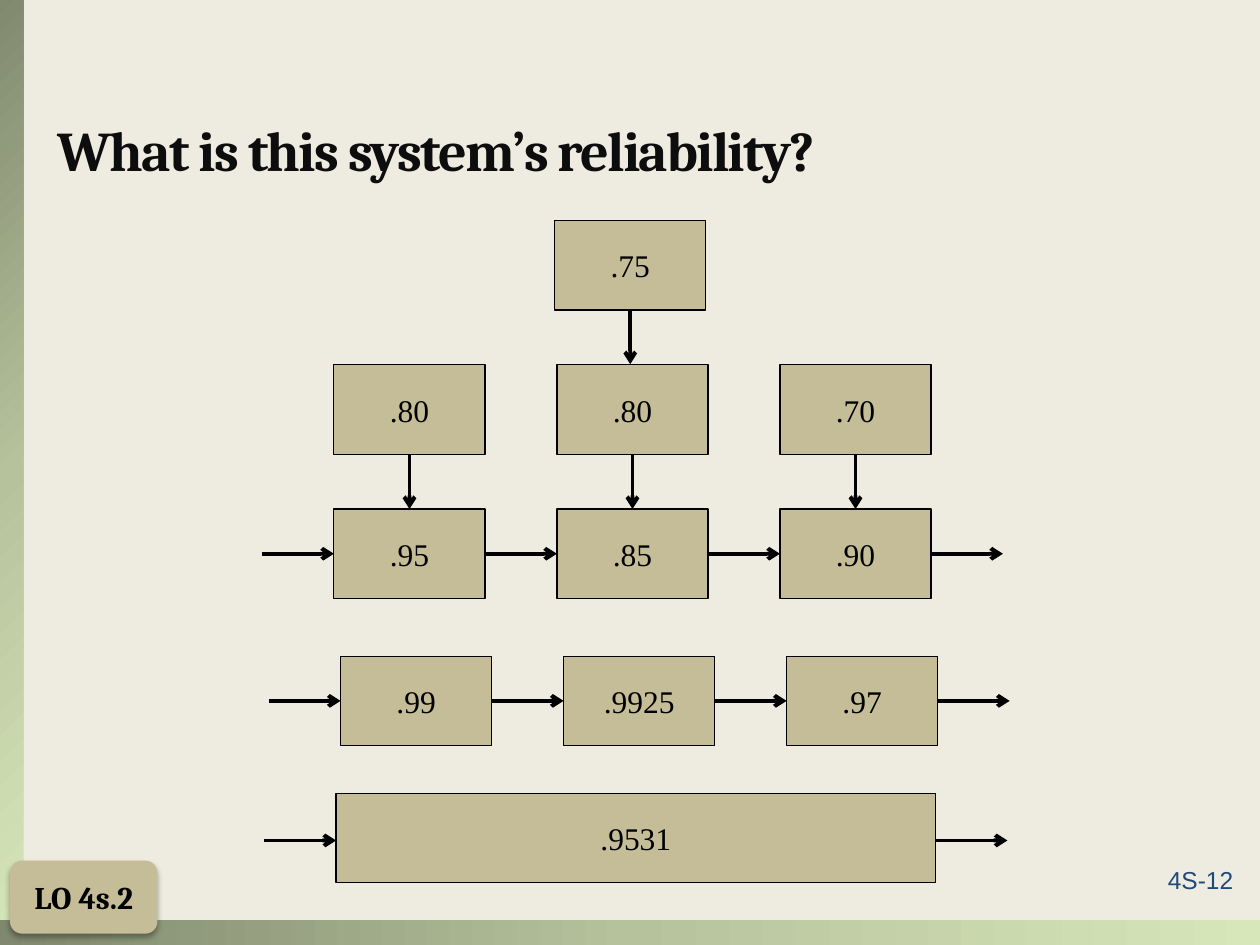
from lxml import etree
from pptx import Presentation
from pptx import util as u
from pptx.dml.color import RGBColor
from pptx.enum import shapes, text
from pptx.oxml import parse_xml
from pptx.oxml.ns import nsdecls, qn

W, H = 10, 7.5
LEFT, TOP = 2.65, 1.75
COL, ROW = 1.77, 1.145
BOX_W, BOX_H = 1.2, 0.71
GAP = COL - BOX_W
TOP_SIDE, LEFT_SIDE, BOTTOM_SIDE, RIGHT_SIDE = range(4)


def rgb(value):
    return RGBColor.from_string(value)


class Deck:
    INK, TAN, PAPER = "000000", "C4BD97", "EEECE1"
    GRADIENT = ((0, "80896E"), (50, "B6C29C"), (100, "D8E7BA"))

    def __init__(self):
        self.prs = Presentation()
        self.prs.slide_width, self.prs.slide_height = u.Inches(W), u.Inches(H)
        self.s = self.prs.slides.add_slide(self.prs.slide_layouts[5])
        self.s.background.fill.solid()
        self.s.background.fill.fore_color.rgb = rgb(self.PAPER)
        self.tree = self.s.shapes

    def group(self):
        self.tree = self.s.shapes.add_group_shape().shapes

    def ungroup(self):
        self.tree = self.s.shapes

    def label(self, sp, words, size, font, color, bold=False,
              align=text.PP_ALIGN.CENTER, anchor=text.MSO_ANCHOR.MIDDLE):
        tf = sp.text_frame
        tf.text = words
        tf.word_wrap = True
        tf.vertical_anchor = anchor
        p = tf.paragraphs[0]
        p.alignment = align
        r = p.runs[0]
        r.font.size, r.font.name, r.font.bold = u.Pt(size), font, bold
        r.font.color.rgb = rgb(color)
        return r

    def shape(self, kind, x, y, w, h, fill=None):
        sp = self.tree.add_shape(kind, *map(u.Inches, (x, y, w, h)))
        sp.shadow.inherit = False
        sp.line.fill.background()
        if fill:
            sp.fill.solid()
            sp.fill.fore_color.rgb = rgb(fill)
        return sp

    def title(self, words):
        sp = self.s.shapes.title
        sp.left, sp.top, sp.width, sp.height = map(u.Inches, (0.36, 0.17, 9, 1.33))
        r = self.label(sp, words, 32, "Cambria", "0D0D0D", True,
                       text.PP_ALIGN.LEFT, text.MSO_ANCHOR.BOTTOM)
        sp.text_frame.auto_size = text.MSO_AUTO_SIZE.NONE
        rPr = r._r.get_or_add_rPr()
        rPr.set("spc", "-100")
        rPr.insert(0, parse_xml(
            f'<a:ln {nsdecls("a")} w="3175"><a:solidFill><a:srgbClr val="D2D0C7">'
            '<a:alpha val="25000"/></a:srgbClr></a:solidFill></a:ln>'))

    def band(self, x, y, w, h, direction, rotation=0):
        sp = self.shape(shapes.MSO_SHAPE.RECTANGLE, x, y, w, h)
        sp.rotation = rotation
        sp.fill.background()
        spPr = sp._element.spPr
        stops = "".join(f'<a:gs pos="{pos * 1000}"><a:srgbClr val="{color}"/></a:gs>'
                        for pos, color in self.GRADIENT)
        spPr.replace(spPr.find(qn("a:noFill")), parse_xml(
            f'<a:gradFill {nsdecls("a")} rotWithShape="0"><a:gsLst>{stops}</a:gsLst>'
            f'{direction}</a:gradFill>'))

    def number(self, words):
        sp = self.tree.add_textbox(*map(u.Inches, (9.17, 6.82, 0.75, 0.34)))
        self.label(sp, words, 14, "Arial", "1F497D",
                   align=text.PP_ALIGN.LEFT, anchor=text.MSO_ANCHOR.TOP)
        sp.text_frame.auto_size = text.MSO_AUTO_SIZE.SHAPE_TO_FIT_TEXT

    def box(self, words, col, row, span=1):
        sp = self.shape(shapes.MSO_SHAPE.RECTANGLE, LEFT + col * COL, TOP + row * ROW,
                        BOX_W + (span - 1) * COL, BOX_H, self.TAN)
        sp.line.color.rgb = rgb(self.INK)
        sp.line.width = u.Pt(0.75)
        self.label(sp, words, 18, "Times New Roman", self.INK)
        return sp

    def side(self, sp, site):
        mid_x, mid_y = sp.left + sp.width // 2, sp.top + sp.height // 2
        return ((mid_x, sp.top), (sp.left, mid_y),
                (mid_x, sp.top + sp.height), (sp.left + sp.width, mid_y))[site]

    def arrow(self, start, end, tail=None, head=None):
        c = self.tree.add_connector(shapes.MSO_CONNECTOR.STRAIGHT, *start, *end)
        if tail:
            c.begin_connect(*tail)
        if head:
            c.end_connect(*head)
        c.line.color.rgb = rgb(self.INK)
        c.line.width = u.Pt(2.25)
        spPr = c._element.spPr
        etree.SubElement(spPr.find(qn("a:ln")), qn("a:tailEnd"), type="arrow")
        etree.SubElement(spPr, qn("a:effectLst"))

    def link(self, a, a_site, b, b_site):
        self.arrow(self.side(a, a_site), self.side(b, b_site), (a, a_site), (b, b_site))

    def drop(self, sp, length):
        x, y = self.side(sp, BOTTOM_SIDE)
        self.arrow((x, y), (x, y + u.Inches(length)), tail=(sp, BOTTOM_SIDE))

    def ends(self, first, last, shift=0):
        gap, dy = u.Inches(GAP), u.Inches(shift)
        (x1, y1), (x2, y2) = self.side(first, LEFT_SIDE), self.side(last, RIGHT_SIDE)
        self.arrow((x1 - gap, y1 + dy), (x1, y1 + dy),
                   head=None if shift else (first, LEFT_SIDE))
        self.arrow((x2, y2 + dy), (x2 + gap, y2 + dy),
                   tail=None if shift else (last, RIGHT_SIDE))

    def series(self, values, col, row):
        boxes = [self.box(value, col + i, row) for i, value in enumerate(values)]
        for a, b in zip(boxes, boxes[1:]):
            self.link(a, RIGHT_SIDE, b, LEFT_SIDE)
        self.ends(boxes[0], boxes[-1])
        return boxes

    def badge(self, words):
        sp = self.shape(shapes.MSO_SHAPE.ROUNDED_RECTANGLE, 0.08, 6.83, 1.17, 0.58, self.TAN)
        self.label(sp, words, 18, "Cambria", self.INK, True)
        sp._element.spPr.find(qn("a:effectLst")).append(parse_xml(
            f'<a:outerShdw {nsdecls("a")} blurRad="{u.Pt(3.5)}" dist="{u.Pt(2.2)}" '
            'dir="5400000" rotWithShape="0"><a:srgbClr val="000000">'
            '<a:alpha val="32000"/></a:srgbClr></a:outerShdw>'))


def main():
    d = Deck()
    d.band(-3.66, 3.63, H, 0.19,
           '<a:path path="circle"><a:fillToRect r="100000" b="100000"/></a:path>', 270)
    d.band(0, 7.3, W, 0.2, '<a:lin ang="0" scaled="0"/>')
    d.number("4S-12")
    d.title("What is this system’s reliability?")

    d.group()
    d.drop(d.box(".75", 0.99, 0), 0.43)
    backups = [d.box(value, i, 1) for i, value in enumerate((".80", ".80", ".70"))]
    for backup, main_part in zip(backups, d.series((".95", ".85", ".90"), 0, 2)):
        d.link(backup, BOTTOM_SIDE, main_part, TOP_SIDE)

    d.group()
    d.series((".99", ".9925", ".97"), 0.03, 3.02)

    d.group()
    total = d.box(".9531", 0.01, 3.97, 3.01)
    d.ends(total, total, 0.02)

    d.ungroup()
    d.badge("LO 4s.2")
    d.prs.save("out.pptx")


if __name__ == "__main__":
    main()
